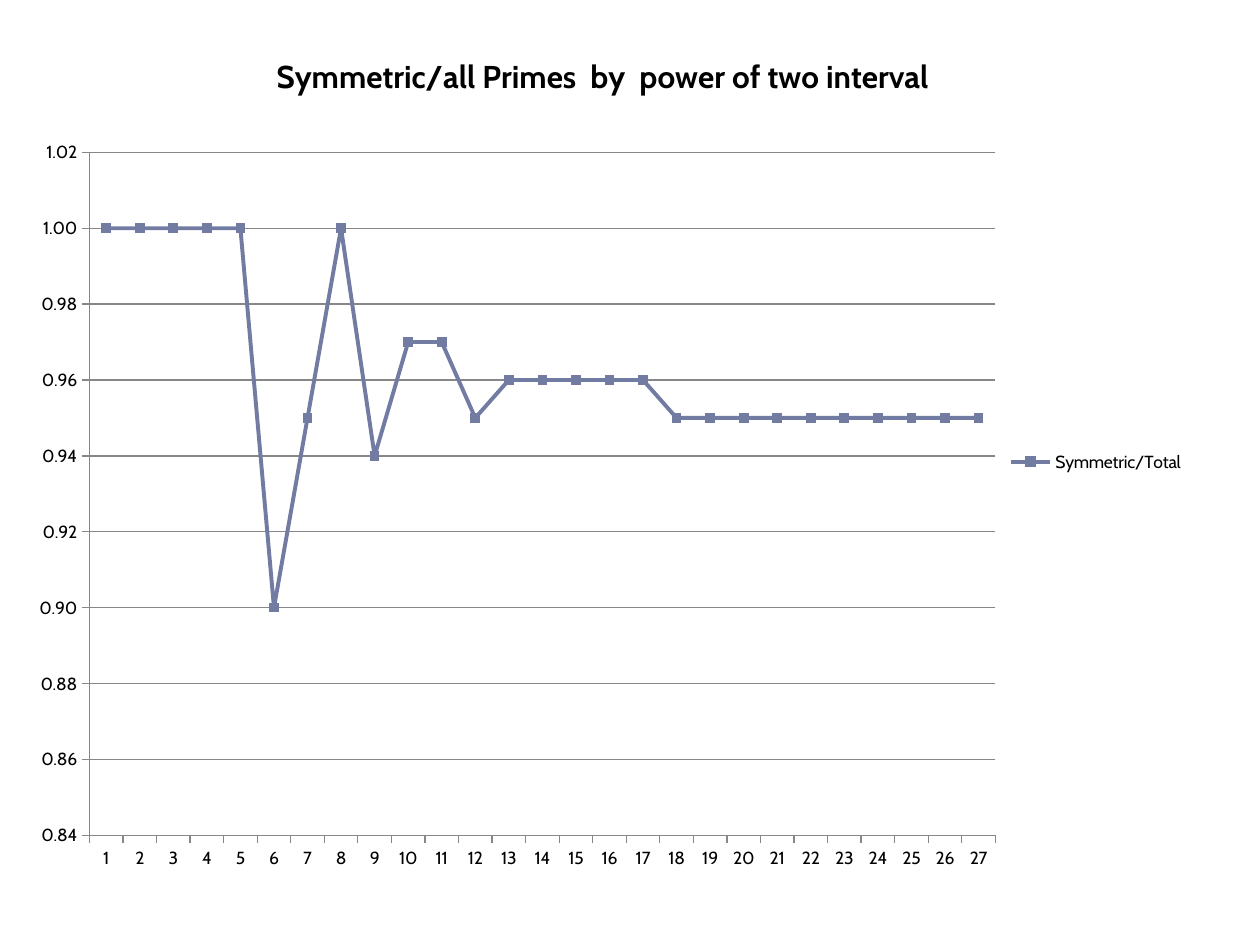
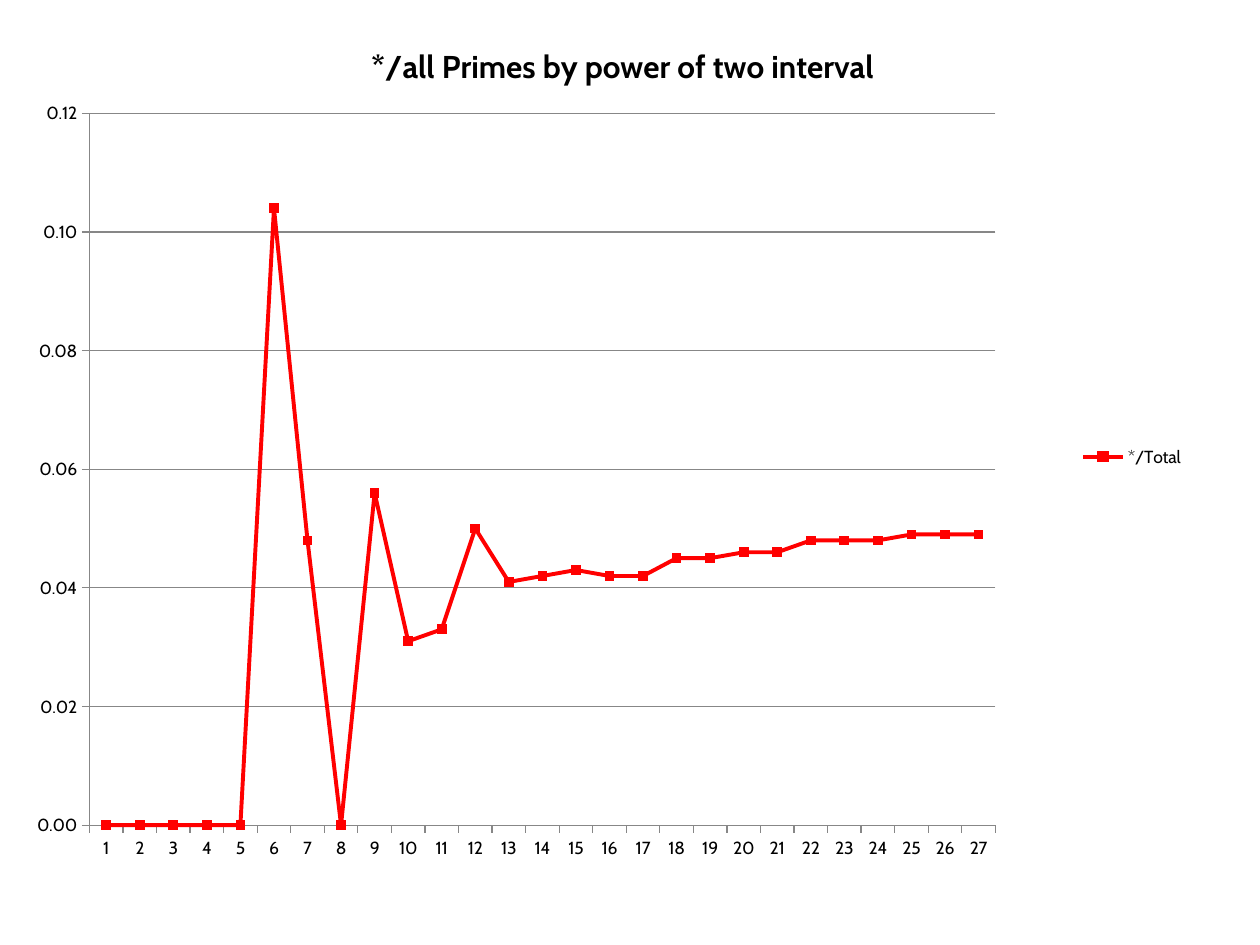
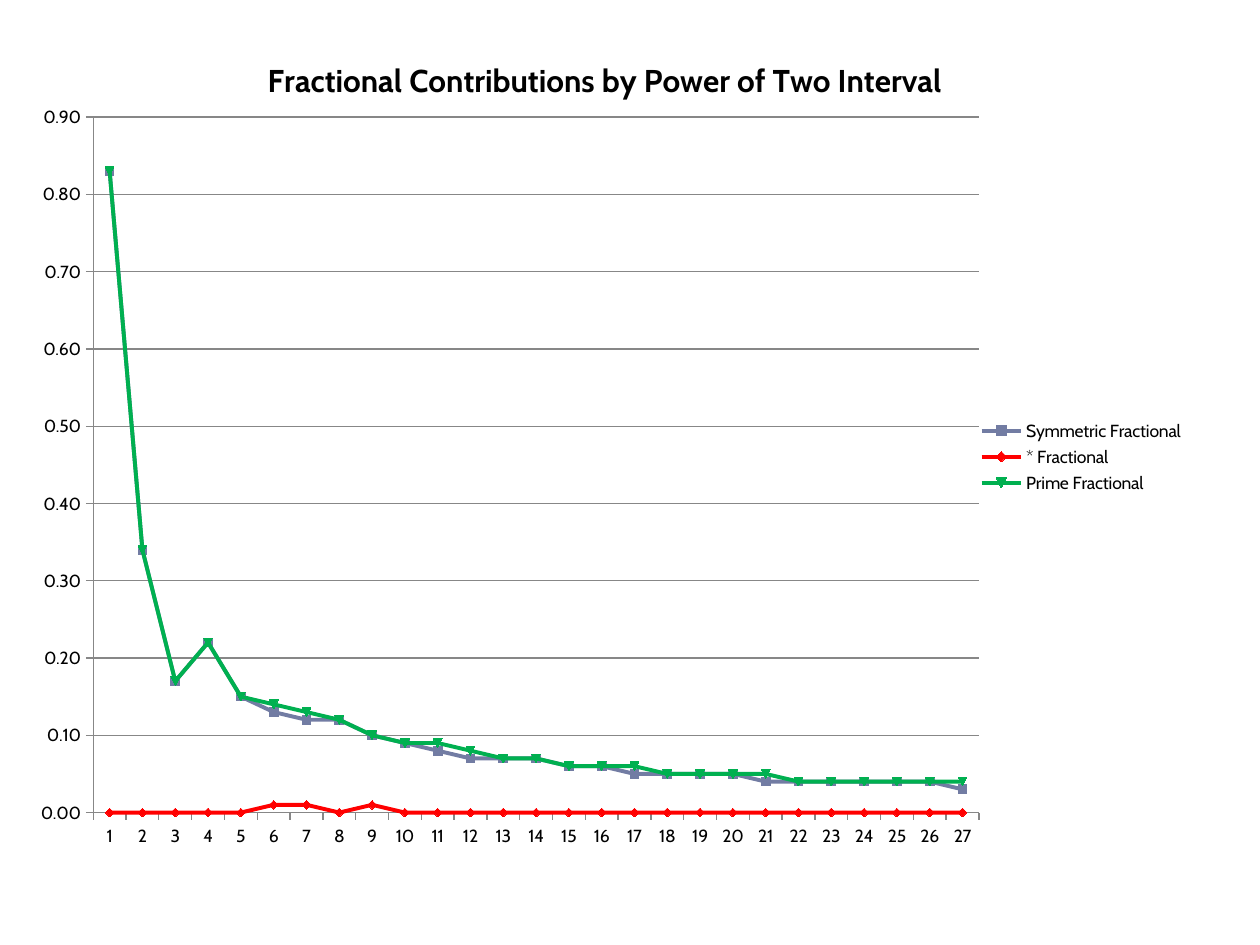
import dataclasses

import lxml.etree
import pptx
import pptx.chart.data
import pptx.dml.color
import pptx.enum.chart
import pptx.oxml.ns
import pptx.util

Inches = pptx.util.Inches
Pt = pptx.util.Pt
RGB = pptx.dml.color.RGBColor.from_string


@dataclasses.dataclass(frozen=True)
class Theme:
    face: str = "Cabin"
    ink: str = "000000"
    grid: str = "878787"
    slate: str = "727CA3"
    red: str = "FF0000"
    green: str = "00B050"
    head: int = 18
    body: int = 10
    rule: float = 0.75
    line: float = 2.25
    mark: int = 5


THEME = Theme()

# Shares within each interval
POWERS = [str(n) for n in range(1, 28)]
EVEN = [1, 1, 1, 1, 1, 0.9, 0.95, 1, 0.94, 0.97, 0.97, 0.95,
        *[0.96] * 5, *[0.95] * 10]
STAR = [0, 0, 0, 0, 0, 0.104, 0.048, 0, 0.056, 0.031, 0.033, 0.05, 0.041, 0.042,
        0.043, 0.042, 0.042, 0.045, 0.045, 0.046, 0.046, 0.048, 0.048, 0.048,
        0.049, 0.049, 0.049]

# Parts of the whole sum
EVEN_PART = [0.83, 0.34, 0.17, 0.22, 0.15, 0.13, 0.12, 0.12, 0.1, 0.09, 0.08,
             0.07, 0.07, 0.07, 0.06, 0.06, 0.05, 0.05, 0.05, 0.05, 0.04, 0.04,
             0.04, 0.04, 0.04, 0.04, 0.03]
STAR_PART = [0, 0, 0, 0, 0, 0.01, 0.01, 0, 0.01, *[0] * 18]
PRIME_PART = [0.83, 0.34, 0.17, 0.22, 0.15, 0.14, 0.13, 0.12, 0.1, 0.09, 0.09,
              0.08, 0.07, 0.07, 0.06, 0.06, 0.06, 0.05, 0.05, 0.05, 0.05, 0.04,
              0.04, 0.04, 0.04, 0.04, 0.04]


def set_font(font, size, bold=False):
    font.name = THEME.face
    font.size = Pt(size)
    font.bold = bold
    font.color.rgb = RGB(THEME.ink)


def set_line(line, color, width):
    line.color.rgb = RGB(color)
    line.width = Pt(width)


def set_place(parent, index, frame, spot, inner=False):
    """Fix a chart part at left, top (and width, height) within its frame."""
    tag = pptx.oxml.ns.qn
    for old in parent.findall(tag("c:layout")):
        parent.remove(old)
    layout = parent.makeelement(tag("c:layout"))
    parent.insert(index, layout)
    manual = lxml.etree.SubElement(layout, tag("c:manualLayout"))
    parts = {"layoutTarget": "inner"} if inner else {}
    parts.update(xMode="edge", yMode="edge")
    sides = (frame.width, frame.height) * 2
    for name, length, side in zip("xywh", spot, sides):
        parts[name] = Inches(length) / side
    for name, value in parts.items():
        lxml.etree.SubElement(manual, tag("c:" + name)).set("val", str(value))


def add_title(frame, text, spot):
    frame.chart.has_title = True
    title = frame.chart.chart_title
    title.include_in_layout = False
    para = title.text_frame.paragraphs[0]
    para.text = text
    set_font(para.font, THEME.head, bold=True)
    set_place(title._element, 1, frame, spot)


def style_axes(chart, scale):
    value = chart.value_axis
    value.minimum_scale, value.maximum_scale, value.major_unit = scale
    value.tick_labels.number_format = "0.00"
    value.tick_labels.number_format_is_linked = False
    value.has_major_gridlines = True
    set_line(value.major_gridlines.format.line, THEME.grid, THEME.rule)
    for axis in (value, chart.category_axis):
        axis.major_tick_mark = pptx.enum.chart.XL_TICK_MARK.OUTSIDE
        axis.minor_tick_mark = pptx.enum.chart.XL_TICK_MARK.NONE
        set_line(axis.format.line, THEME.grid, THEME.rule)
        set_font(axis.tick_labels.font, THEME.body)


def style_line(series, color):
    series.smooth = False
    set_line(series.format.line, color, THEME.line)
    mark = series.marker
    mark.style = pptx.enum.chart.XL_MARKER_STYLE.AUTOMATIC
    mark.size = THEME.mark
    mark.format.fill.solid()
    mark.format.fill.fore_color.rgb = RGB(color)
    set_line(mark.format.line, color, THEME.rule)


def add_graph(deck, box, title, spot, plot, scale, lines):
    slide = deck.slides.add_slide(deck.slide_layouts[6])
    data = pptx.chart.data.CategoryChartData(number_format="0.00")
    data.categories = POWERS
    for name, values, _ in lines:
        data.add_series(name, values)
    kind = pptx.enum.chart.XL_CHART_TYPE.LINE_MARKERS
    frame = slide.shapes.add_chart(kind, *map(Inches, box), data)
    chart = frame.chart
    set_font(chart.font, THEME.body)
    add_title(frame, title, spot)

    # Plot area and its lines
    set_place(chart._chartSpace.chart.plotArea, 0, frame, plot, inner=True)
    style_axes(chart, scale)
    chart.plots[0].vary_by_categories = False
    for series, (_, _, color) in zip(chart.plots[0].series, lines):
        style_line(series, color)

    # Legend
    chart.has_legend = True
    chart.legend.position = pptx.enum.chart.XL_LEGEND_POSITION.RIGHT
    chart.legend.include_in_layout = False
    set_font(chart.legend.font, THEME.body)


def main():
    deck = pptx.Presentation()
    deck.slide_width, deck.slide_height = Inches(10), Inches(7.5)

    # Symmetric share
    add_graph(deck, (0.25, 0.25, 9.25, 6.83),
              "Symmetric/all Primes  by  power of two interval", (1.9, 0.14),
              (0.46, 0.96, 7.19, 5.42), (0.84, 1.02, 0.02),
              [("Symmetric/Total", EVEN, THEME.slate)])

    # Star share
    add_graph(deck, (0.25, 0.25, 9.25, 6.75),
              "*/all Primes by power of two interval", (2.65, 0.06),
              (0.46, 0.65, 7.19, 5.65), (0, 0.12, 0.02),
              [("*/Total", STAR, THEME.red)])

    # All three parts
    add_graph(deck, (0.17, 0.25, 9.33, 6.75),
              "Fractional Contributions by Power of Two Interval", (1.91, 0.17),
              (0.57, 0.68, 7.03, 5.52), (0, 0.9, 0.1),
              [("Symmetric Fractional", EVEN_PART, THEME.slate),
               ("* Fractional", STAR_PART, THEME.red),
               ("Prime Fractional", PRIME_PART, THEME.green)])

    deck.save("out.pptx")


if __name__ == "__main__":
    main()
